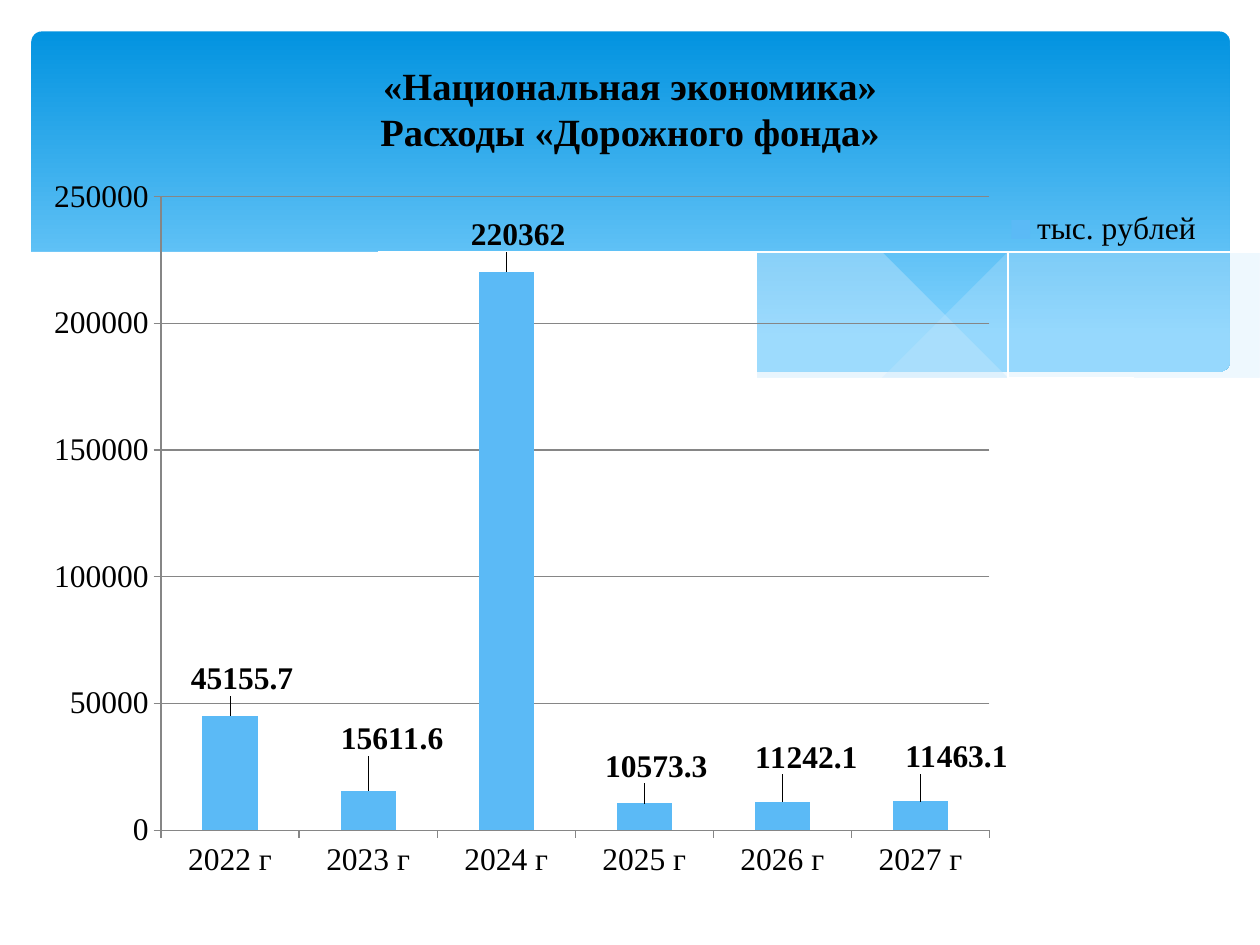
from lxml import etree
from pptx import Presentation
from pptx import util as u
from pptx.chart.data import CategoryChartData
from pptx.dml.color import RGBColor
from pptx.enum import chart as ch
from pptx.enum import shapes, text
from pptx.oxml import parse_xml
from pptx.oxml.ns import nsdecls, qn

FONT = "Times New Roman"
YEARS = ["2022 г", "2023 г", "2024 г", "2025 г", "2026 г", "2027 г"]
SPENDING = [45155.7, 15611.6, 220362, 10573.3, 11242.1, 11463.1]
# Shift of each value label, as a share of the chart's width and height
LABEL_SHIFTS = [(0.01, -0.02), (0.02, -0.04), (0.01, -0.02),
                (0.01, -0.02), (0.02, -0.03), (0.03, -0.03)]


def color(value):
    return RGBColor.from_string(value)


def set_font(font, size, bold=False):
    font.name, font.size, font.bold = FONT, u.Pt(size), bold
    font.color.rgb = color("000000")


def smooth(knots, steps=8):
    """Points of a Catmull-Rom curve through the knots."""
    ends = [knots[0], *knots, knots[-1]]
    points = [knots[0]]
    for a, b, c, d in zip(ends, ends[1:], ends[2:], ends[3:]):
        for step in range(1, steps + 1):
            t = step / steps
            points.append(tuple(
                (2 * q + (r - p) * t + (2 * p - 5 * q + 4 * r - s) * t ** 2
                 + (3 * q - p - 3 * r + s) * t ** 3) / 2
                for p, q, r, s in zip(a, b, c, d)))
    return points


def add_outline(page, points, fill=None, opacity=100):
    """A filled closed wave, or a thin white open curve when fill is None."""
    builder = page.shapes.build_freeform(*points[0], scale=u.Inches(1))
    builder.add_line_segments(points[1:], close=fill is not None)
    wave = builder.convert_to_shape()
    wave.shadow.inherit = False
    if fill is None:
        wave.fill.background()
        wave.line.color.rgb = color("FFFFFF")
        wave.line.width = u.Pt(0)
        return
    wave.line.fill.background()
    wave.fill.solid()
    wave.fill.fore_color.rgb = color(fill)
    if opacity < 100:
        tint = wave.element.spPr.find(".//" + qn("a:srgbClr"))
        etree.SubElement(tint, qn("a:alpha")).set("val", str(opacity * 1000))


def add_header(page, left, top, width, height):
    # Gradient panel
    panel = page.shapes.add_shape(shapes.MSO_SHAPE.ROUNDED_RECTANGLE,
                                  left, top, width, height)
    panel.adjustments[0] = 0.03
    panel.shadow.inherit = False
    panel.line.fill.background()
    panel.fill.gradient()
    panel.fill.gradient_angle = 270
    for stop, place, shade in zip(panel.fill.gradient_stops, (0, 0.9), ("0293E0", "83D3FE")):
        stop.position = place
        stop.color.rgb = color(shade)

    # Translucent waves
    right_wave = (smooth([(9.76, 2), (9.21, 2.1), (8.61, 2.23), (7.53, 2.48), (6.61, 2.65)])
                  + smooth([(6.61, 2.65), (7.19, 2.72), (7.69, 2.77), (8.14, 2.78),
                            (8.63, 2.75), (9.13, 2.67), (9.49, 2.57), (9.76, 2.47)]))
    add_outline(page, right_wave, "C6E7FC", 29)
    middle_wave = (smooth([(8.93, 2.73), (8.07, 2.6), (7.06, 2.4), (6.29, 2.22), (5.55, 2.05),
                           (4.89, 1.94), (4.2, 1.87), (3.61, 1.85), (2.86, 1.91)])
                   + smooth([(2.86, 1.91), (3.62, 2.03), (4.49, 2.22), (5.66, 2.48),
                             (6.5, 2.64), (7.22, 2.74), (7.96, 2.78), (8.48, 2.77),
                             (8.93, 2.73)]))
    add_outline(page, middle_wave, "C6E7FC", 40)

    # Thin white curves
    add_outline(page, smooth([(3.09, 1.95), (3.53, 1.89), (4.16, 1.87), (4.89, 1.9),
                              (5.82, 2), (6.65, 2.13), (7.6, 2.33), (8.31, 2.51),
                              (9.07, 2.72)]))
    add_outline(page, smooth([(6.13, 2.57), (6.95, 2.35), (7.76, 2.16), (8.66, 1.99),
                              (9.24, 1.9), (9.75, 1.85)]))

    # White wave that cuts off the panel
    edge = smooth([(0.23, 2.13), (0.59, 1.99), (1.06, 1.89), (1.77, 1.84), (2.5, 1.86),
                   (3.4, 1.97), (4.47, 2.2), (5.55, 2.45), (6.48, 2.62), (7.26, 2.72),
                   (8.09, 2.77), (8.75, 2.73), (9.3, 2.62), (9.77, 2.46)])
    add_outline(page, edge + [(9.77, 3.29), (0.23, 3.29)], "FFFFFF")


def add_title(page, left, top, width, height):
    title = page.shapes.title
    title.left, title.top, title.width, title.height = left, top, width, height
    frame = title.text_frame
    frame.text = "«Национальная экономика»\nРасходы «Дорожного фонда»"
    frame.vertical_anchor = text.MSO_ANCHOR.MIDDLE
    for para in frame.paragraphs:
        para.alignment = text.PP_ALIGN.CENTER
        for span in para.runs:
            set_font(span.font, 22, True)
    title.element.getparent().append(title.element)  # bring to front


def manual_layout(x, y, w=None, h=None, inner=False):
    parts = '<c:layoutTarget val="inner"/>' if inner else ""
    if w is not None:
        parts += '<c:xMode val="edge"/><c:yMode val="edge"/>'
    sizes = {"x": x, "y": y, "w": w, "h": h}
    parts += "".join(f'<c:{name} val="{size}"/>'
                     for name, size in sizes.items() if size is not None)
    return parse_xml(f'<c:layout {nsdecls("c")}><c:manualLayout>{parts}'
                     '</c:manualLayout></c:layout>')


def place(element, layout, after=None):
    for old in element.findall(qn("c:layout")):
        element.remove(old)
    if after is None:
        element.insert(0, layout)
    else:
        element.find(qn(after)).addnext(layout)


def add_spending_chart(page, left, top, width, height):
    data = CategoryChartData()
    data.categories = YEARS
    data.add_series("тыс. рублей", SPENDING)
    chart = page.shapes.add_chart(ch.XL_CHART_TYPE.COLUMN_CLUSTERED,
                                  left, top, width, height, data).chart
    chart.has_title = False
    chart.font.name, chart.font.size = "Calibri", u.Pt(18)
    place(chart.plots[0]._element.getparent(), manual_layout(0.11, 0.04, 0.69, 0.87, True))

    # Axes
    for axis in (chart.category_axis, chart.value_axis):
        set_font(axis.tick_labels.font, 18)
        axis.major_tick_mark = ch.XL_TICK_MARK.OUTSIDE
        axis.format.line.color.rgb = color("868686")
    chart.value_axis.maximum_scale = 250000
    chart.value_axis.minimum_scale = 0
    chart.value_axis.major_unit = 50000
    chart.value_axis.major_gridlines.format.line.color.rgb = color("868686")

    # Columns and value labels
    plot = chart.plots[0]
    plot.gap_width = 150
    plot.vary_by_categories = False
    series = plot.series[0]
    series.format.fill.solid()
    series.format.fill.fore_color.rgb = color("5BBAF6")
    labels = series.data_labels
    labels.show_value = True
    labels.position = ch.XL_LABEL_POSITION.OUTSIDE_END
    set_font(labels.font, 18, True)
    for index, shift in enumerate(LABEL_SHIFTS):
        label = series.points[index].data_label
        set_font(label.font, 18, True)
        label.position = ch.XL_LABEL_POSITION.OUTSIDE_END
    for element, shift in zip(labels._element.findall(qn("c:dLbl")), LABEL_SHIFTS):
        place(element, manual_layout(*shift), "c:idx")

    # Legend
    chart.has_legend = True
    chart.legend.position = ch.XL_LEGEND_POSITION.RIGHT
    chart.legend.include_in_layout = False
    set_font(chart.legend.font, 18)
    place(chart.legend._element, manual_layout(0.81, 0.05, 0.17, 0.07), "c:legendPos")


def main():
    deck = Presentation()
    deck.slide_width, deck.slide_height = u.Inches(10), u.Inches(7.5)
    page = deck.slides.add_slide(deck.slide_layouts[5])
    add_header(page, *map(u.Inches, (0.25, 0.25, 9.51, 2.7)))
    add_spending_chart(page, *map(u.Inches, (0.23, 1.33, 9.53, 5.78)))
    add_title(page, *map(u.Inches, (0, 0.39, 10, 0.94)))
    deck.save("out.pptx")


if __name__ == "__main__":
    main()
